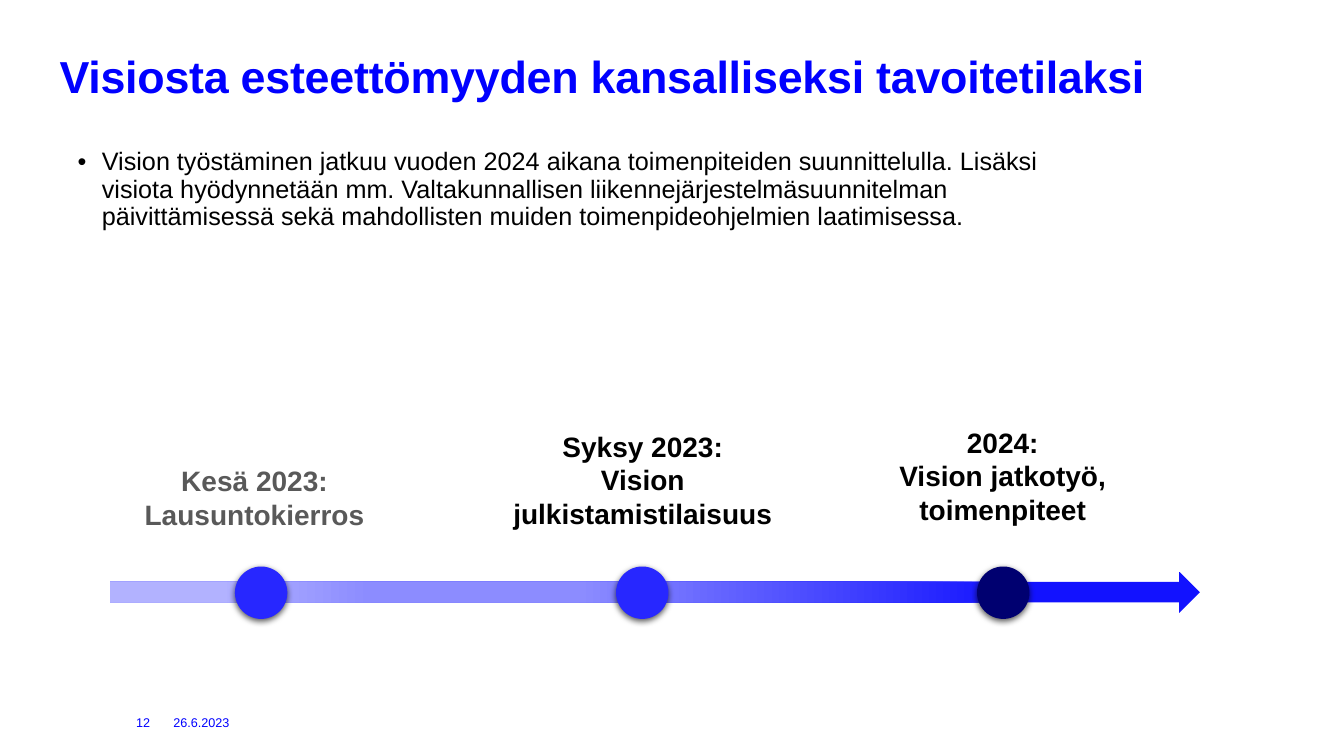
from lxml import etree
from pptx import Presentation
from pptx.dml.color import RGBColor
from pptx.enum.shapes import MSO_SHAPE
from pptx.enum.text import MSO_ANCHOR, MSO_AUTO_SIZE, PP_ALIGN
from pptx.oxml import parse_xml
from pptx.oxml.ns import nsdecls, qn
from pptx.util import Emu, Pt

EMU_PER_PX = 9144  # 100 px to the inch
BLUE = RGBColor(0x00, 0x00, 0xFF)
DOT_BLUE = RGBColor(0x27, 0x27, 0xFF)
NAVY = RGBColor(0x00, 0x00, 0x70)
GREY = RGBColor(0x59, 0x59, 0x59)
BLACK = RGBColor(0x00, 0x00, 0x00)
ARROW_STOPS = [
    (17, RGBColor(0x12, 0x12, 0xFF)),
    (57, RGBColor(0x8C, 0x8C, 0xFF)),
    (76, RGBColor(0x8C, 0x8C, 0xFF)),
    (90, RGBColor(0xB2, 0xB2, 0xFF)),
]
DOT_SIZE = 52

# Dot centre, dot colour, label box (relative to the arrow), label colour, lines
MILESTONES = [
    (150, DOT_BLUE, (20, -112, 247, 77), GREY, ["Kesä 2023:\vLausuntokierros"]),
    (528, DOT_BLUE, (384, -146, 289, 107), BLACK,
     ["Syksy 2023:", "Vision julkistamistilaisuus"]),
    (886, NAVY, (741, -150, 289, 107), BLACK,
     ["2024:", "Vision jatkotyö,", "toimenpiteet"]),
]


def px(length):
    return Emu(length * EMU_PER_PX)


def set_format(target, values):
    for name, value in values.items():
        setattr(target, name, value)


def add_text(slide, box, lines, size, color, bold=False, frame_format=None,
             paragraph_format=None, inset=0):
    shape = slide.shapes.add_textbox(*map(px, box))
    frame = shape.text_frame
    frame.word_wrap = True
    if not inset:
        for side in ("left", "top", "right", "bottom"):
            setattr(frame, f"margin_{side}", 0)
    set_format(frame, frame_format or {})
    for index, line in enumerate(lines):
        paragraph = frame.add_paragraph() if index else frame.paragraphs[0]
        paragraph.text = line
        set_format(paragraph, paragraph_format or {})
        for run in paragraph.runs:
            set_format(run.font, {"name": "Arial", "size": Pt(size), "bold": bold})
            run.font.color.rgb = color
    return frame


def add_plain_shape(slide, kind, box):
    shape = slide.shapes.add_shape(kind, *map(px, box))
    shape.shadow.inherit = False
    shape.line.fill.background()
    return shape


def add_title(slide, box):
    frame = add_text(
        slide, box, ["Visiosta esteettömyyden kansalliseksi tavoitetilaksi"],
        32, BLUE, True, {"vertical_anchor": MSO_ANCHOR.BOTTOM}, {"line_spacing": 0.85})
    frame.paragraphs[0].runs[0].font._element.set("spc", "-20")


def add_body(slide, box):
    frame = add_text(
        slide, box,
        ["Vision työstäminen jatkuu vuoden 2024 aikana toimenpiteiden suunnittelulla. "
         "Lisäksi visiota hyödynnetään mm. Valtakunnallisen liikennejärjestelmäsuunnitelman "
         "päivittämisessä sekä mahdollisten muiden toimenpideohjelmien laatimisessa."],
        18, BLACK, paragraph_format={"line_spacing": 0.9})
    properties = frame.paragraphs[0]._p.get_or_add_pPr()
    properties.set("marL", str(px(24)))
    properties.set("indent", str(px(-24)))
    etree.SubElement(properties, qn("a:buFont")).set("typeface", "Arial")
    etree.SubElement(properties, qn("a:buChar")).set("char", "•")


def add_arrow(slide, box):
    arrow = add_plain_shape(slide, MSO_SHAPE.RIGHT_ARROW, box)
    arrow.fill.gradient()
    gradient = arrow._element.spPr.find(qn("a:gradFill"))
    stops = "".join(
        f'<a:gs pos="{position * 1000}"><a:srgbClr val="{color}"/></a:gs>'
        for position, color in ARROW_STOPS)
    gradient.getparent().replace(gradient, parse_xml(
        f'<a:gradFill {nsdecls("a")} rotWithShape="1"><a:gsLst>{stops}</a:gsLst>'
        '<a:lin ang="10800000" scaled="0"/></a:gradFill>'))


def add_dot(slide, box, color):
    dot = add_plain_shape(slide, MSO_SHAPE.OVAL, box)
    dot.fill.solid()
    dot.fill.fore_color.rgb = color
    effects = dot._element.spPr.find(qn("a:effectLst"))
    effects.append(parse_xml(
        f'<a:outerShdw {nsdecls("a")} blurRad="{Pt(4.5)}" dist="{Pt(1.5)}" '
        'dir="5400000" algn="ctr" rotWithShape="0">'
        '<a:srgbClr val="000000"><a:alpha val="63000"/></a:srgbClr></a:outerShdw>'))


def add_timeline(slide, box):
    left, top, _, height = box
    add_arrow(slide, box)
    dot_top = top + (height - DOT_SIZE) // 2 + 1
    for center, dot_color, label_box, label_color, lines in MILESTONES:
        dot_left = left + center - DOT_SIZE // 2
        add_dot(slide, (dot_left, dot_top, DOT_SIZE, DOT_SIZE), dot_color)
        x, y, label_width, label_height = label_box
        add_text(slide, (left + x, top + y, label_width, label_height), lines,
                 20, label_color, True,
                 {"auto_size": MSO_AUTO_SIZE.SHAPE_TO_FIT_TEXT},
                 {"alignment": PP_ALIGN.CENTER}, inset=True)


def add_footer(slide, box):
    left, top, width, height = box
    number_width, date_offset = 35, 37
    middle = {"vertical_anchor": MSO_ANCHOR.MIDDLE}
    add_text(slide, (left, top, number_width, height), ["12"], 9, BLUE,
             frame_format=middle)
    add_text(slide, (left + date_offset, top, width - date_offset, height),
             ["26.6.2023"], 9, BLUE, frame_format=middle)


def main():
    presentation = Presentation()
    presentation.slide_width, presentation.slide_height = px(1333), px(750)
    slide = presentation.slides.add_slide(presentation.slide_layouts[6])
    add_title(slide, (59, 39, 1101, 63))
    add_body(slide, (77, 148, 969, 208))
    add_timeline(slide, (109, 567, 1081, 41))
    add_footer(slide, (135, 707, 117, 20))
    presentation.save("out.pptx")


if __name__ == "__main__":
    main()
